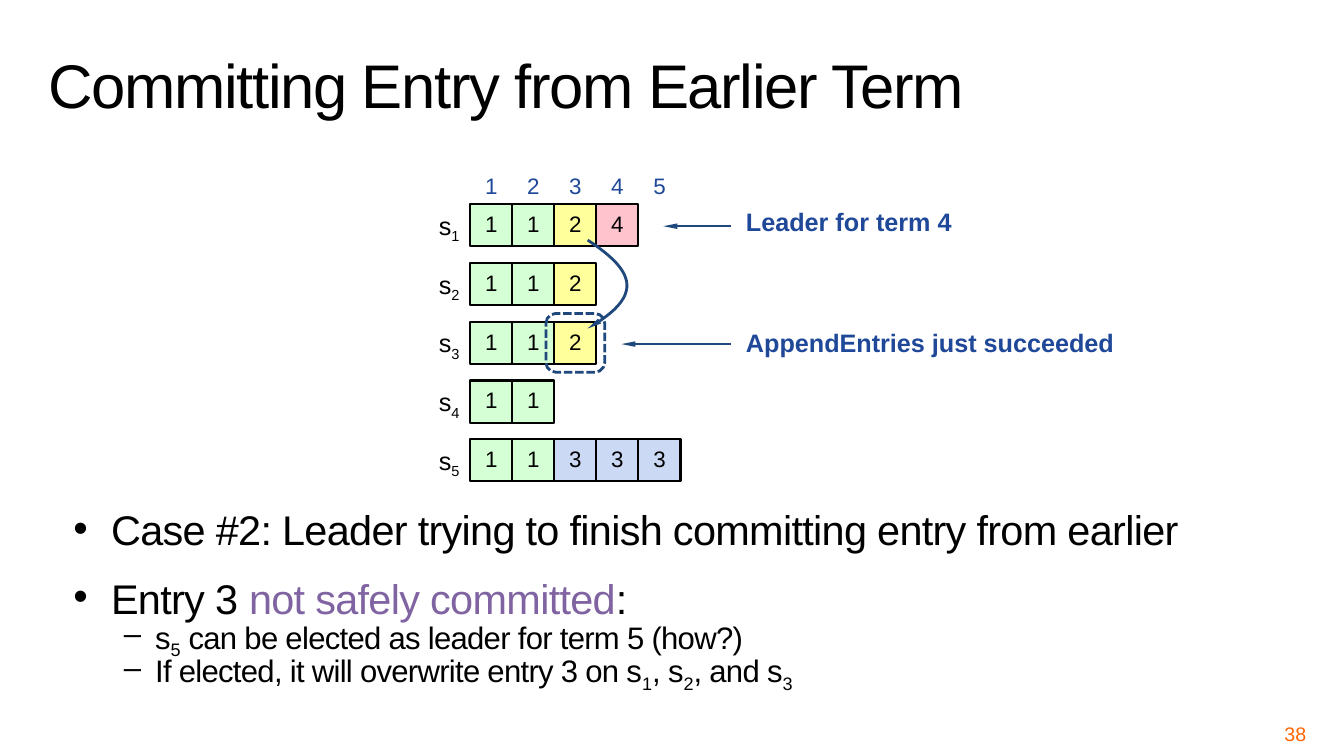
from lxml.etree import SubElement
from pptx import Presentation
from pptx.dml.color import RGBColor
from pptx.enum.dml import MSO_LINE
from pptx.enum.shapes import MSO_CONNECTOR, MSO_SHAPE
from pptx.enum.text import MSO_ANCHOR, PP_ALIGN
from pptx.oxml.ns import qn
from pptx.util import Cm, Pt

BLACK = RGBColor(0x00, 0x00, 0x00)
BLUE = RGBColor(0x1F, 0x48, 0x99)
NAVY = RGBColor(0x1F, 0x49, 0x7D)
PURPLE = RGBColor(0x80, 0x64, 0xA2)
ORANGE = RGBColor(0xFF, 0x66, 0x00)
TERM_COLORS = {
    1: RGBColor(0xD5, 0xFF, 0xD5),
    2: RGBColor(0xFF, 0xFF, 0x9B),
    3: RGBColor(0xCC, 0xD9, 0xF4),
    4: RGBColor(0xFF, 0xC3, 0xCE),
}

LOGS = [(1, 1, 2, 4), (1, 1, 2), (1, 1, 2), (1, 1), (1, 1, 3, 3, 3)]
LOG_LEFT, LOG_TOP = 11.85, 5.15
CELL, ROW_STEP = 1.06, 1.48


def write(paragraph, text, size=18, color=BLACK, bold=False, tracking=0):
    """Append text to a paragraph; the character after each "_" is a subscript."""
    first, *others = text.split("_")
    pieces = [(first, False)]
    for other in others:
        pieces += [(other[0], True), (other[1:], False)]
    for piece, subscript in pieces:
        if not piece:
            continue
        run = paragraph.add_run()
        run.text = piece
        run.font.name = "Arial"
        run.font.size = Pt(size)
        run.font.bold = bold
        run.font.color.rgb = color
        properties = run.font._element
        if tracking:
            properties.set("spc", str(round(tracking * 100)))
        if subscript:
            properties.set("baseline", "-25000")


def prepare_frame(shape, anchor=MSO_ANCHOR.TOP, inset=0, wrap=True):
    frame = shape.text_frame
    frame.word_wrap = wrap
    frame.vertical_anchor = anchor
    frame.margin_left = frame.margin_right = Cm(inset)
    frame.margin_top = frame.margin_bottom = Cm(inset)
    return frame


def add_text(slide, text, left, top, width, height, align=PP_ALIGN.LEFT,
             line_spacing=None, anchor=MSO_ANCHOR.TOP, inset=0, wrap=True, **font):
    box = slide.shapes.add_textbox(Cm(left), Cm(top), Cm(width), Cm(height))
    paragraph = prepare_frame(box, anchor, inset, wrap).paragraphs[0]
    paragraph.alignment = align
    paragraph.line_spacing = line_spacing
    write(paragraph, text, **font)


def add_entry(slide, term, left, top):
    entry = slide.shapes.add_shape(
        MSO_SHAPE.RECTANGLE, Cm(left), Cm(top), Cm(CELL), Cm(CELL))
    entry.shadow.inherit = False
    entry.fill.solid()
    entry.fill.fore_color.rgb = TERM_COLORS[term]
    entry.line.color.rgb = BLACK
    entry.line.width = Pt(1.5)
    paragraph = prepare_frame(entry, MSO_ANCHOR.MIDDLE).paragraphs[0]
    paragraph.alignment = PP_ALIGN.CENTER
    paragraph.line_spacing = Pt(17)
    write(paragraph, str(term), size=16)


def add_logs(slide):
    for column in range(5):
        add_text(slide, str(column + 1), LOG_LEFT + column * CELL, 4.22, CELL, 0.68,
                 align=PP_ALIGN.CENTER, inset=0.13, wrap=False, size=16, color=BLUE)
    for row, terms in enumerate(LOGS):
        top = LOG_TOP + row * ROW_STEP
        add_text(slide, f"s_{row + 1}", LOG_LEFT - CELL, top + 0.15, CELL, 0.76,
                 align=PP_ALIGN.CENTER)
        for column, term in enumerate(terms):
            add_entry(slide, term, LOG_LEFT + column * CELL, top)


def style_line(line, width):
    line.color.rgb = NAVY
    line.width = Pt(width)


def add_arrowhead(line):
    SubElement(line._get_or_add_ln(), qn("a:tailEnd"), type="triangle", w="sm", len="lg")


def add_note(slide, text, text_top, arrow_end, arrow_y, width):
    """Add a bold remark with an arrow pointing left from it."""
    add_text(slide, text, 18.8, text_top, width, 0.69, line_spacing=Pt(19),
             color=BLUE, bold=True)
    arrow = slide.shapes.add_connector(
        MSO_CONNECTOR.STRAIGHT, Cm(18.42), Cm(arrow_y), Cm(arrow_end), Cm(arrow_y))
    style_line(arrow.line, 1.5)
    add_arrowhead(arrow.line)
    SubElement(arrow._element.spPr, qn("a:effectLst"))


def add_highlight(slide):
    highlight = slide.shapes.add_shape(
        MSO_SHAPE.ROUNDED_RECTANGLE, Cm(13.76), Cm(7.9), Cm(1.48), Cm(1.48))
    highlight.shadow.inherit = False
    highlight.fill.background()
    style_line(highlight.line, 2)
    highlight.line.dash_style = MSO_LINE.SQUARE_DOT


def add_replication_arrow(slide):
    """Draw the curved arrow from s1 to s3 along a cubic Bézier curve."""
    controls = [(14.81, 6.05), (16.05, 6.86), (16.21, 7.47), (14.81, 8.28)]
    steps = 24
    points = []
    for step in range(steps + 1):
        t = step / steps
        weights = ((1 - t) ** 3, 3 * t * (1 - t) ** 2, 3 * t * t * (1 - t), t ** 3)
        points.append(tuple(
            Cm(sum(weight * point[axis] for weight, point in zip(weights, controls)))
            for axis in (0, 1)))
    builder = slide.shapes.build_freeform(*points[0])
    builder.add_line_segments(points[1:], close=False)
    curve = builder.convert_to_shape()
    curve.shadow.inherit = False
    curve.fill.background()
    style_line(curve.line, 2)
    add_arrowhead(curve.line)


def add_bullet(paragraph, character, margin, hanging, space_before):
    paragraph.line_spacing = 0.7
    paragraph.space_before = Pt(space_before)
    properties = paragraph._p.get_or_add_pPr()
    properties.set("marL", str(Cm(margin)))
    properties.set("indent", str(-Cm(hanging)))
    SubElement(properties, qn("a:buFont"), typeface="Arial")
    SubElement(properties, qn("a:buChar"), char=character)


def add_body(slide):
    box = slide.shapes.add_textbox(Cm(1.75), Cm(12.95), Cm(29.18), Cm(5.49))
    frame = prepare_frame(box, inset=0.1)
    main_points = [
        (6, [("Case #2: Leader trying to finish committing entry from earlier", BLACK)]),
        (24, [("Entry 3 ", BLACK), ("not safely committed", PURPLE), (":", BLACK)]),
    ]
    details = [
        "s_5 can be elected as leader for term 5 (how?)",
        "If elected, it will overwrite entry 3 on s_1, s_2, and s_3",
    ]
    paragraph = frame.paragraphs[0]
    for space_before, parts in main_points:
        add_bullet(paragraph, "•", 0.95, 0.95, space_before)
        for text, color in parts:
            write(paragraph, text, size=29.6, color=color, tracking=-0.5)
        paragraph = frame.add_paragraph()
    for index, text in enumerate(details):
        if index:
            paragraph = frame.add_paragraph()
        paragraph.level = 1
        add_bullet(paragraph, "–", 2.06, 0.79, 3)
        write(paragraph, text, size=22.2, tracking=-0.5)


def main():
    presentation = Presentation()
    presentation.slide_width = Cm(33.87)
    presentation.slide_height = Cm(19.05)
    slide = presentation.slides.add_slide(presentation.slide_layouts[6])

    add_text(slide, "Committing Entry from Earlier Term", 1.09, 0.33, 31.8, 2.84,
             line_spacing=0.8, anchor=MSO_ANCHOR.BOTTOM, inset=0.13, size=44, tracking=-1)
    add_logs(slide)
    add_highlight(slide)
    add_note(slide, "Leader for term 4", 5.29, 16.72, 5.7, 5.51)
    add_note(slide, "AppendEntries just succeeded", 8.33, 15.66, 8.67, 10.74)
    add_replication_arrow(slide)
    add_body(slide)
    add_text(slide, "38", 25.12, 18.21, 7.9, 0.58, align=PP_ALIGN.RIGHT,
             anchor=MSO_ANCHOR.MIDDLE, inset=0.1, size=14, color=ORANGE)
    presentation.save("out.pptx")


if __name__ == "__main__":
    main()
